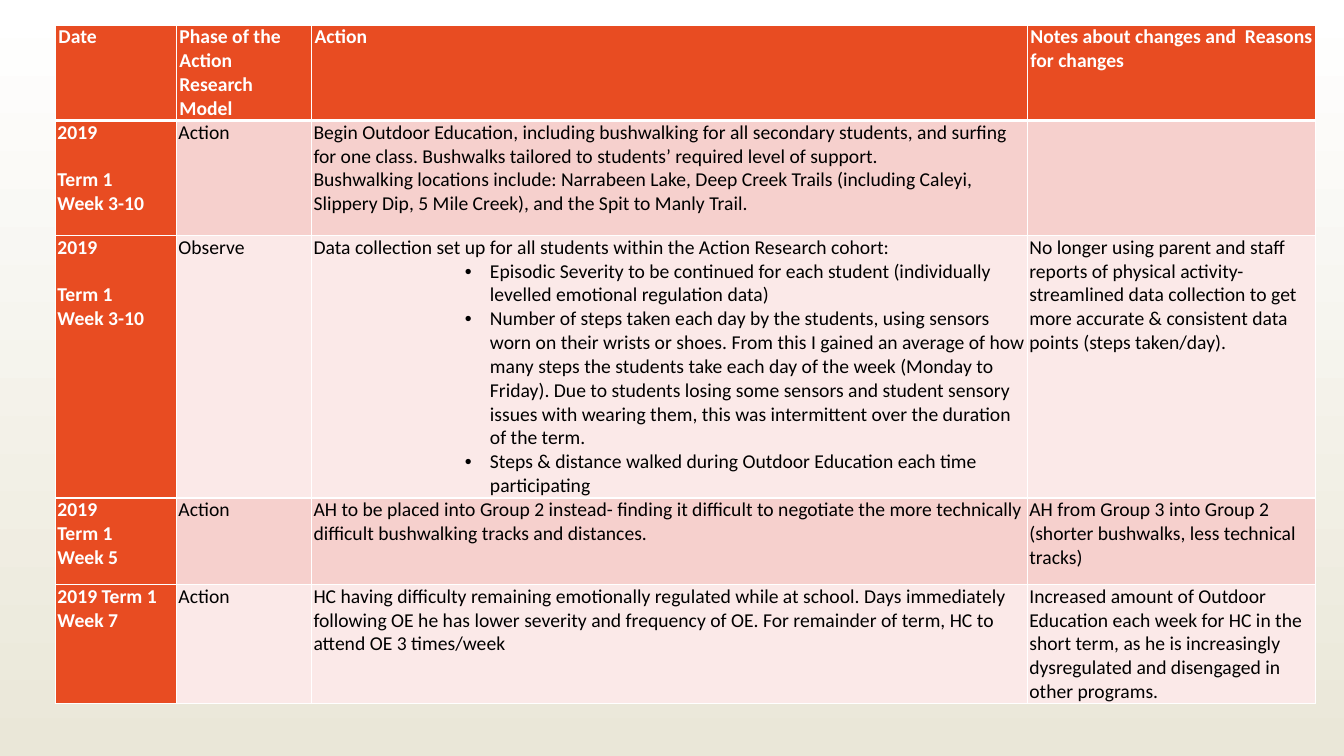
from dataclasses import dataclass

from pptx import Presentation
from pptx.dml.color import RGBColor
from pptx.oxml.ns import qn
from pptx.util import Inches, Pt
from lxml.etree import SubElement

WHITE = RGBColor(0xFF, 0xFF, 0xFF)
BLACK = RGBColor(0x00, 0x00, 0x00)
SAND = RGBColor(0xEA, 0xE7, 0xD8)
ORANGE = RGBColor(0xE8, 0x4C, 0x22)
PINK = RGBColor(0xF6, 0xD0, 0xCD)
PALE_PINK = RGBColor(0xFB, 0xE9, 0xE8)

FONT_NAME = "Calibri"
FONT_SIZE = Pt(14)
LINE_GAP = Pt(17)
COLUMN_WIDTHS = (1.2, 1.34, 7.1, 2.86)
HEADINGS = ("Date", "Phase of the Action Research Model", "Action",
            "Notes about changes and  Reasons for changes")


@dataclass(frozen=True)
class Entry:
    """One row of the action research log."""
    height: float
    date: tuple[str, ...]
    phase: str
    action: tuple[str, ...]
    notes: str = ""
    bullets: tuple[str, ...] = ()
    gap_after_year: bool = False


HEADER_HEIGHT = 0.68
ENTRIES = (
    Entry(1.14, ("2019", "Term 1", "Week 3-10"), "Action",
          ("Begin Outdoor Education, including bushwalking for all secondary students, "
           "and surfing for one class. Bushwalks tailored to students’ required level "
           "of support.",
           "Bushwalking locations include: Narrabeen Lake, Deep Creek Trails (including "
           "Caleyi, Slippery Dip, 5 Mile Creek), and the Spit to Manly Trail."),
          gap_after_year=True),
    Entry(2, ("2019", "Term 1", "Week 3-10"), "Observe",
          ("Data collection set up for all students within the Action Research cohort:",),
          "No longer using parent and staff reports of physical activity- streamlined "
          "data collection to get more accurate & consistent data points (steps taken/day).",
          bullets=(
              "Episodic Severity to be continued for each student (individually levelled "
              "emotional regulation data)",
              "Number of steps taken each day by the students, using sensors worn on their "
              "wrists or shoes. From this I gained an average of how many steps the students "
              "take each day of the week (Monday to Friday). Due to students losing some "
              "sensors and student sensory issues with wearing them, this was intermittent "
              "over the duration of the term.",
              "Steps & distance walked during Outdoor Education each time participating"),
          gap_after_year=True),
    Entry(0.86, ("2019", "Term 1", "Week 5"), "Action",
          ("AH to be placed into Group 2 instead- finding it difficult to negotiate the "
           "more technically difficult bushwalking tracks and distances.",),
          "AH from Group 3 into Group 2 (shorter bushwalks, less technical tracks)"),
    Entry(1.08, ("2019 Term 1 Week 7",), "Action",
          ("HC having difficulty remaining emotionally regulated while at school. Days "
           "immediately following OE he has lower severity and frequency of OE. For "
           "remainder of term, HC to attend OE 3 times/week",),
          "Increased amount of Outdoor Education each week for HC in the short term, as "
          "he is increasingly dysregulated and disengaged in other programs."),
)


def add_borders(cell, top: float, bottom: float) -> None:
    properties = cell._tc.get_or_add_tcPr()
    for side, width in (("L", 1), ("R", 1), ("T", top), ("B", bottom)):
        line = SubElement(properties, qn(f"a:ln{side}"), w=str(Pt(width)))
        fill = SubElement(line, qn("a:solidFill"))
        SubElement(fill, qn("a:srgbClr"), val=str(WHITE))


def add_bullet(paragraph) -> None:
    paragraph.level = 3
    properties = paragraph._p.get_or_add_pPr()
    properties.set("marL", str(Inches(1.75)))
    properties.set("indent", str(Inches(-0.25)))
    SubElement(properties, qn("a:buFont"), typeface="Arial")
    SubElement(properties, qn("a:buChar"), char="•")


def fill_cell(cell, lines: tuple[str, ...], color: RGBColor, strong: bool,
              side_margin: float = 0.02, top: float = 1, bottom: float = 1) -> None:
    cell.margin_left = cell.margin_right = Inches(side_margin)
    cell.margin_top = cell.margin_bottom = 0
    add_borders(cell, top, bottom)
    cell.fill.solid()
    cell.fill.fore_color.rgb = color
    cell.text = "\n".join(lines)
    for paragraph in cell.text_frame.paragraphs:
        font = paragraph.font
        font.name, font.size, font.bold = FONT_NAME, FONT_SIZE, strong
        font.color.rgb = WHITE if strong else BLACK


def fill_entry(table, row: int, entry: Entry) -> None:
    table.rows[row].height = Inches(entry.height)
    band = PINK if row % 2 else PALE_PINK
    texts = (entry.date, (entry.phase,), entry.action + entry.bullets, (entry.notes,))
    for column, lines in enumerate(texts):
        is_date = column == 0
        fill_cell(table.cell(row, column), lines, ORANGE if is_date else band,
                  is_date, top=3 if row == 1 else 1)
    if entry.gap_after_year:
        table.cell(row, 0).text_frame.paragraphs[0].space_after = LINE_GAP
    for paragraph in table.cell(row, 2).text_frame.paragraphs[len(entry.action):]:
        add_bullet(paragraph)


def main() -> None:
    deck = Presentation()
    deck.slide_width, deck.slide_height = Inches(13.33), Inches(7.5)
    slide = deck.slides.add_slide(deck.slide_layouts[6])

    # Background fading from top to bottom
    backdrop = slide.background.fill
    backdrop.gradient()
    backdrop.gradient_angle = 270
    for stop, color in zip(backdrop.gradient_stops, (WHITE, SAND)):
        stop.color.rgb = color

    # Table grid
    height = HEADER_HEIGHT + sum(entry.height for entry in ENTRIES)
    log = slide.shapes.add_table(
        len(ENTRIES) + 1, len(HEADINGS), Inches(0.55), Inches(0.25),
        Inches(sum(COLUMN_WIDTHS)), Inches(height)).table
    log.first_col = True
    for column, width in zip(log.columns, COLUMN_WIDTHS):
        column.width = Inches(width)

    # Headings and entries
    log.rows[0].height = Inches(HEADER_HEIGHT)
    for column, heading in enumerate(HEADINGS):
        fill_cell(log.cell(0, column), (heading,), ORANGE, True,
                  side_margin=0.03, bottom=3)
    for row, entry in enumerate(ENTRIES, start=1):
        fill_entry(log, row, entry)

    deck.save("out.pptx")


if __name__ == "__main__":
    main()
